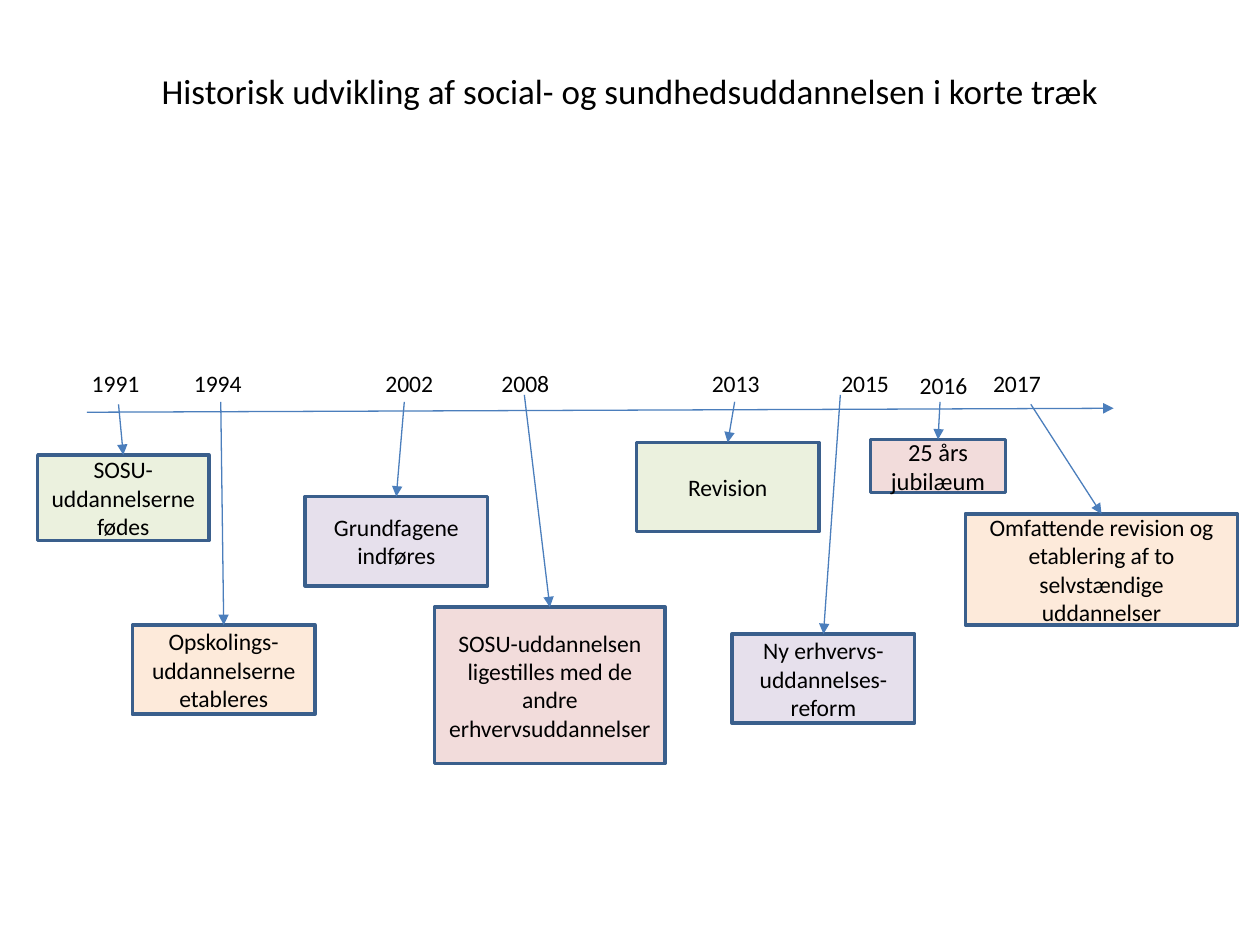
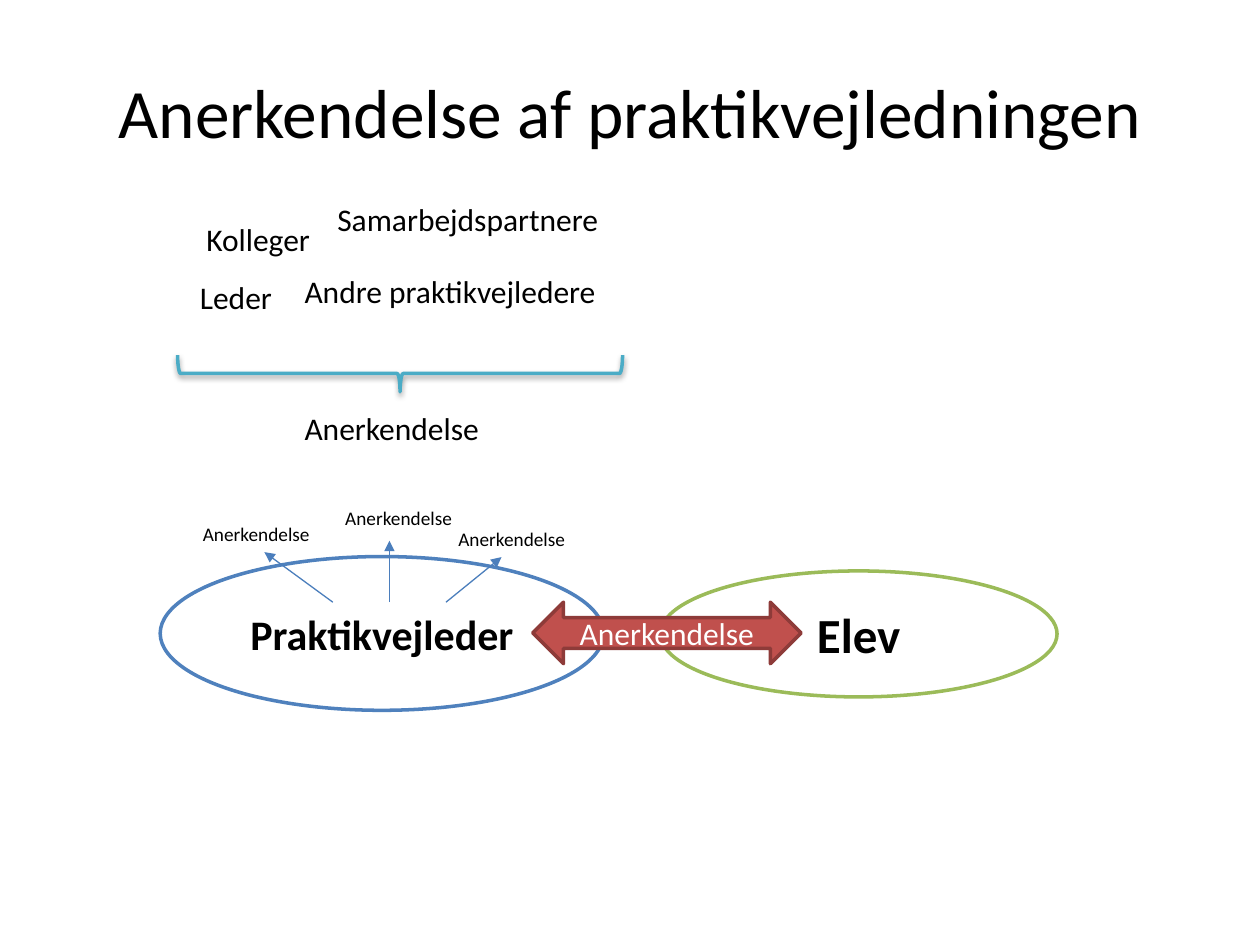
from lxml.etree import SubElement
from pptx import Presentation
from pptx.dml.color import RGBColor
from pptx.enum.shapes import MSO_CONNECTOR, MSO_SHAPE
from pptx.enum.text import MSO_ANCHOR, MSO_AUTO_SIZE, PP_ALIGN
from pptx.oxml.ns import qn
from pptx.util import Cm, Pt

FONT = "Calibri"
BLACK = RGBColor(0x00, 0x00, 0x00)
WHITE = RGBColor(0xFF, 0xFF, 0xFF)
ARROW_BLUE = RGBColor(0x4B, 0x7E, 0xBC)
BORDER_BLUE = RGBColor(0x3A, 0x5F, 0x8C)
BLUE = RGBColor(0x4F, 0x81, 0xBD)
GREEN = RGBColor(0x9B, 0xBB, 0x59)
TEAL = RGBColor(0x4B, 0xAC, 0xC6)
RED = RGBColor(0xC0, 0x50, 0x4D)
DARK_RED = RGBColor(0x8E, 0x3B, 0x39)
PALE_GREEN = RGBColor(0xEB, 0xF1, 0xDE)
PALE_ORANGE = RGBColor(0xFD, 0xEA, 0xDA)
PALE_PURPLE = RGBColor(0xE6, 0xE0, 0xEC)
PALE_RED = RGBColor(0xF2, 0xDC, 0xDB)

TIMELINE_BOX = (0.76, 7.32)
NETWORK_BOX = (3.58, 3.91, 8.97)
RELATION_BOX = (3.23, 10.08)

AXIS = ((0.99, 0.99), (21.69, 0.91))
EVENTS = [
    ("1991", (0.84, 0), (1.63, 0.83), (0, 1.85, 3.45, 1.73),
     PALE_GREEN, "SOSU-uddannelserne fødes", 13.5),
    ("1994", (2.9, 0), (3.69, 0.78), (1.91, 5.28, 3.68, 1.8),
     PALE_ORANGE, "Opskolings-uddannelserne etableres", 13.5),
    ("2002", (6.76, 0), (7.39, 0.78), (5.39, 2.69, 3.68, 1.8),
     PALE_PURPLE, "Grundfagene indføres", 13.5),
    ("2008", (9.1, 0), (9.81, 0.64), (8, 4.92, 4.65, 3.15),
     PALE_RED, "SOSU-uddannelsen ligestilles med de andre erhvervsuddannelser", 13.5),
    ("2013", (13.34, 0), (14.05, 0.78), (12.07, 1.6, 3.68, 1.8),
     PALE_GREEN, "Revision", 13.5),
    ("2015", (15.95, 0), (16.18, 0.64), (14, 5.46, 3.68, 1.8),
     PALE_PURPLE, "Ny erhvervs-uddannelses-reform", 13.5),
    ("2016", (17.53, 0.03), (18.19, 0.78), (16.79, 1.54, 2.72, 1.07),
     PALE_RED, "25 års jubilæum", 14),
    ("2017", (19.01, 0), (20.02, 0.83), (18.7, 3.04, 5.49, 2.24),
     PALE_ORANGE, "Omfattende revision og etablering af to selvstændige uddannelser", 13.5),
]
NETWORK_LABELS = [
    ("Leder", 0.2, 1.58, 2.39),
    ("Kolleger", 0.33, 0.41, 3),
    ("Samarbejdspartnere", 2.97, 0, 6),
    ("Andre praktikvejledere", 2.31, 1.45, 6.81),
    ("Anerkendelse", 2.31, 4.22, 4.11),
]
RECOGNITIONS = [
    ((0.61, 0.33), (3.48, 2.06), (2.1, 1.05)),
    ((3.48, 0), (4.62, 2.06), (4.62, 0.82)),
    ((5.76, 0.43), (5.76, 2.06), (6.88, 1.15)),
]
RELATION_SHAPES = [
    (MSO_SHAPE.OVAL, (0, 1.14, 8.94, 3.1), WHITE, BLUE, "Praktikvejleder",
     {"size": Pt(24), "bold": True}),
    (MSO_SHAPE.OVAL, (10.08, 1.43, 8, 2.54), WHITE, GREEN, "Elev",
     {"size": Pt(28), "bold": True}),
    (MSO_SHAPE.LEFT_RIGHT_ARROW, (7.51, 2.06, 5.41, 1.24), RED, DARK_RED,
     "Anerkendelse", {"size": Pt(18), "color": WHITE}),
]


def write(shape, text, align, formats):
    """Put one paragraph in a shape and format its font."""
    para = shape.text_frame.paragraphs[0]
    para.alignment = align
    span = para.add_run()
    span.text = text
    settings = {"name": FONT, "color": BLACK, **formats}
    span.font.color.rgb = settings.pop("color")
    for key, value in settings.items():
        setattr(span.font, key, value)


def set_frame(shape, auto_size, anchor):
    """Set the wrapping, fitting and anchoring of a text frame."""
    settings = {"word_wrap": True, "auto_size": auto_size, "vertical_anchor": anchor}
    for key, value in settings.items():
        setattr(shape.text_frame, key, value)


def add_page(deck, title, size, top, height):
    """Add a title-only slide with its title placed and formatted."""
    page = deck.slides.add_slide(deck.slide_layouts[5])
    holder = page.shapes.title
    place = {"left": 1.27, "top": top, "width": 22.86, "height": height}
    for key, value in place.items():
        setattr(holder, key, Cm(value))
    set_frame(holder, MSO_AUTO_SIZE.NONE, MSO_ANCHOR.MIDDLE)
    write(holder, title, PP_ALIGN.CENTER, {"size": Pt(size)})
    return page


def add_label(page, text, left, top, width, size):
    """Add a left-aligned text box."""
    height = size * 0.04 + 0.3
    label = page.shapes.add_textbox(Cm(left), Cm(top), Cm(width), Cm(height))
    set_frame(label, MSO_AUTO_SIZE.SHAPE_TO_FIT_TEXT, MSO_ANCHOR.TOP)
    write(label, text, PP_ALIGN.LEFT, {"size": Pt(size)})


def add_figure(page, kind, origin, place, fill, line, text, formats):
    """Add an outlined shape with centred text, offset from an origin."""
    left, top, width, height = place
    figure = page.shapes.add_shape(
        kind, Cm(origin[0] + left), Cm(origin[1] + top), Cm(width), Cm(height))
    figure.shadow.inherit = False
    figure.fill.solid()
    figure.fill.fore_color.rgb = fill
    figure.line.color.rgb = line
    figure.line.width = Pt(2)
    set_frame(figure, MSO_AUTO_SIZE.NONE, MSO_ANCHOR.MIDDLE)
    write(figure, text, PP_ALIGN.CENTER, formats)


def add_arrow(page, origin, start, end):
    """Add a thin arrow between two points, offset from an origin."""
    points = [Cm(base + step) for point in (start, end)
              for base, step in zip(origin, point)]
    arrow = page.shapes.add_connector(MSO_CONNECTOR.STRAIGHT, *points)
    arrow.line.color.rgb = ARROW_BLUE
    arrow.line.width = Pt(0.75)
    SubElement(arrow.line._get_or_add_ln(), qn("a:tailEnd"), type="triangle")
    SubElement(arrow._element.spPr, qn("a:effectLst"))


def add_brace(page, center_x, center_y, span, depth):
    """Add a downward brace with a soft shadow around its centre."""
    brace = page.shapes.add_shape(
        MSO_SHAPE.RIGHT_BRACE, Cm(center_x - depth / 2), Cm(center_y - span / 2),
        Cm(depth), Cm(span))
    brace.rotation = 90
    brace.fill.background()
    brace.line.color.rgb = TEAL
    brace.line.width = Pt(2)
    effects = SubElement(brace._element.spPr, qn("a:effectLst"))
    shadow = SubElement(effects, qn("a:outerShdw"), blurRad="40000",
                        dist="20000", dir="5400000", rotWithShape="0")
    color = SubElement(shadow, qn("a:srgbClr"), val=str(BLACK))
    SubElement(color, qn("a:alpha"), val="38000")


def draw_timeline(page, box):
    """Draw the axis, the years and the event boxes they point to."""
    left, top = box
    add_arrow(page, box, *AXIS)
    for year, (year_x, year_y), start, place, fill, text, size in EVENTS:
        add_label(page, year, left + year_x, top + year_y, 1.9, 13.5)
        add_figure(page, MSO_SHAPE.RECTANGLE, box, place, fill, BORDER_BLUE,
                   text, {"size": Pt(size)})
        add_arrow(page, box, start, (place[0] + place[2] / 2, place[1]))


def draw_network(page, box):
    """Draw the people around the supervisor, gathered by a brace."""
    left, top, width = box
    for text, step_x, step_y, label_width in NETWORK_LABELS:
        add_label(page, text, left + step_x, top + step_y, label_width, 18)
    add_brace(page, left + width / 2, top + 3.62, width, 0.74)


def draw_relation(page, box):
    """Draw supervisor and student with the recognition between them."""
    left, top = box
    for kind, place, fill, line, text, formats in RELATION_SHAPES:
        add_figure(page, kind, box, place, fill, line, text, formats)
    for (step_x, step_y), start, end in RECOGNITIONS:
        add_label(page, "Anerkendelse", left + step_x, top + step_y, 3, 11)
        add_arrow(page, box, start, end)


def main():
    """Build both slides and save the deck."""
    deck = Presentation()
    deck.slide_width, deck.slide_height = Cm(25.4), Cm(19.05)
    history = add_page(
        deck, "Historisk udvikling af social- og sundhedsuddannelsen i korte træk",
        20, 0.76, 2.11)
    draw_timeline(history, TIMELINE_BOX)
    recognition = add_page(deck, "Anerkendelse af praktikvejledningen", 39.6, 0.64, 3.18)
    draw_network(recognition, NETWORK_BOX)
    draw_relation(recognition, RELATION_BOX)
    deck.save("out.pptx")


if __name__ == "__main__":
    main()
